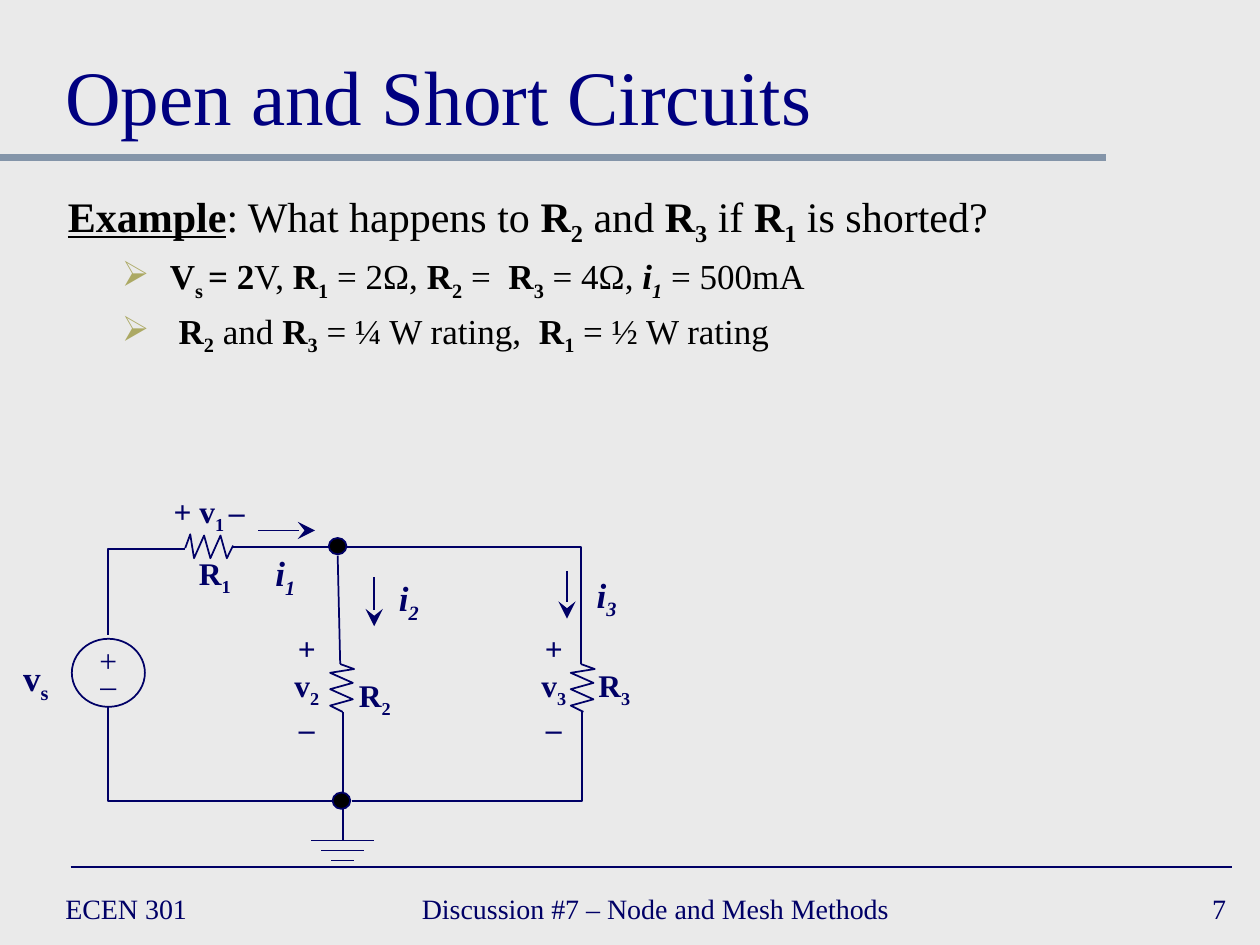
from lxml.etree import SubElement
from pptx import Presentation
from pptx.dml.color import RGBColor
from pptx.enum.shapes import MSO_CONNECTOR, MSO_SHAPE
from pptx.enum.text import MSO_ANCHOR, PP_ALIGN
from pptx.oxml.ns import qn
from pptx.util import Inches, Pt

COLORS = {
    "background": "EAEAEA",
    "rule": "8495A9",
    "circuit": "000066",
    "title": "000080",
    "body": "000000",
    "bullet": "ACA964",
}
FONT = "Times New Roman"
ZIGZAG = [(0.08, 0), (0.19, 0.04), (0, 0.07), (0.18, 0.15),
          (0, 0.2), (0.18, 0.28), (0, 0.33), (0.1, 0.38)]
ZIGZAG_WIDTH = 0.19


def rgb(name):
    return RGBColor.from_string(COLORS[name])


def symbol(letter, index, style="b"):
    return [(letter, style), (index, style + "s")]


def write_paragraph(paragraph, runs, size, color="circuit", align=PP_ALIGN.LEFT):
    paragraph.alignment = align
    font = paragraph.font
    font.name, font.size = FONT, Pt(size)
    font.color.rgb = rgb(color)
    for key, attribute in (("b", "bold"), ("i", "italic")):
        if all(key in style for _, style in runs):
            setattr(font, attribute, True)
    for text, style in runs:
        run = paragraph.add_run()
        run.text = text
        run.font.bold = "b" in style
        run.font.italic = "i" in style
        if "u" in style:
            run.font.underline = True
        if "s" in style:
            run.font._element.set("baseline", "-25000")


def add_text(slide, box, lines, size, color="circuit", align=PP_ALIGN.CENTER,
             anchor=MSO_ANCHOR.TOP, wrap=False):
    frame = slide.shapes.add_textbox(*map(Inches, box)).text_frame
    frame.word_wrap = wrap
    frame.vertical_anchor = anchor
    for number, runs in enumerate(lines):
        paragraph = frame.add_paragraph() if number else frame.paragraphs[0]
        write_paragraph(paragraph, runs, size, color, align)


def add_line(slide, start, end, color="circuit", width=1, arrow=False):
    line = slide.shapes.add_connector(
        MSO_CONNECTOR.STRAIGHT, *map(Inches, (*start, *end)))
    line.line.color.rgb = rgb(color)
    line.line.width = Pt(width)
    if arrow:
        SubElement(line.line._get_or_add_ln(), qn("a:tailEnd"),
                   type="stealth", w="lg", len="lg")
    SubElement(line._element.spPr, qn("a:effectLst"))


def add_wire(slide, points):
    corners = [(Inches(x), Inches(y)) for x, y in points]
    builder = slide.shapes.build_freeform(*corners[0])
    builder.add_line_segments(corners[1:], close=False)
    wire = builder.convert_to_shape()
    wire.shadow.inherit = False
    wire.fill.background()
    wire.line.color.rgb = rgb("circuit")
    wire.line.width = Pt(1)


def add_resistor(slide, left, top, horizontal=False):
    offsets = [(y, ZIGZAG_WIDTH - x) for x, y in ZIGZAG] if horizontal else ZIGZAG
    add_wire(slide, [(left + x, top + y) for x, y in offsets])


def add_ellipse(slide, box, filled):
    ellipse = slide.shapes.add_shape(MSO_SHAPE.OVAL, *map(Inches, box))
    ellipse.shadow.inherit = False
    if filled:
        ellipse.fill.solid()
        ellipse.fill.fore_color.rgb = rgb("body")
    else:
        ellipse.fill.background()
    ellipse.line.color.rgb = rgb("circuit")
    ellipse.line.width = Pt(1)


def add_bullet(paragraph):
    properties = paragraph._p.get_or_add_pPr()
    properties.set("marL", str(Inches(0.81)))
    properties.set("indent", str(Inches(-0.38)))
    paragraph.level = 1
    paragraph.space_before = Pt(4)
    color = SubElement(properties, qn("a:buClr"))
    SubElement(color, qn("a:srgbClr"), val=COLORS["bullet"])
    SubElement(properties, qn("a:buChar"), char="➢")


def add_example(slide):
    r1, r2, r3 = (symbol("R", index) for index in "123")
    question = [("Example", "bu"), (": What happens to ", ""), *r2, (" and ", ""),
                *r3, (" if ", ""), *r1, (" is shorted?", "")]
    values = [("V", "b"), ("s ", "bs"), ("= 2", "b"), ("V, ", ""), *r1,
              (" = 2Ω, ", ""), *r2, (" =  ", ""), *r3, (" = 4Ω, ", ""),
              *symbol("i", "1", "bi"), (" = 500mA", "")]
    ratings = [(" ", ""), *r2, (" and ", ""), *r3, (" = ¼ W rating,  ", ""),
               *r1, (" = ½ W rating", "")]
    frame = slide.shapes.add_textbox(
        Inches(0.44), Inches(1.46), Inches(8.66), Inches(2.27)).text_frame
    frame.word_wrap = True
    write_paragraph(frame.paragraphs[0], question, 24, "body")
    for fact in (values, ratings):
        paragraph = frame.add_paragraph()
        add_bullet(paragraph)
        write_paragraph(paragraph, fact, 20, "body")


def add_source(slide):
    add_text(slide, (0.08, 5.16, 0.41, 0.43), [symbol("v", "s")], 20)
    add_ellipse(slide, (0.57, 5.07, 0.58, 0.54), False)
    for sign, top in (("+", 5.04), ("_", 5.15)):
        add_text(slide, (0.69, top, 0.34, 0.4), [[(sign, "")]], 18)


def add_circuit(slide):
    add_source(slide)
    for wire in (
        [(0.86, 5.04), (0.86, 4.36), (1.47, 4.36)],
        [(0.86, 5.61), (0.86, 6.36), (2.64, 6.36)],
        [(2.75, 4.34), (4.61, 4.34), (4.61, 5.27)],
        [(2.79, 6.36), (4.62, 6.36), (4.62, 5.65)],
    ):
        add_wire(slide, wire)
    for start, end in (
        ((1.84, 4.34), (2.61, 4.34)),
        ((2.68, 4.41), (2.7, 5.27)),
        ((2.72, 5.65), (2.72, 6.29)),
        ((2.72, 6.42), (2.72, 6.67)),
    ):
        add_line(slide, start, end)
    for level, half_width in enumerate((0.25, 0.17, 0.09)):
        y = 6.67 + 0.08 * level
        add_line(slide, (2.72 - half_width, y), (2.72 + half_width, y))

    for left, top in ((2.61, 4.27), (2.64, 6.29)):
        add_ellipse(slide, (left, top, 0.14, 0.13), True)
    add_resistor(slide, 1.47, 4.24, horizontal=True)
    for left in (2.62, 4.53):
        add_resistor(slide, left, 5.27)

    for start, end in (((2.05, 4.21), (2.5, 4.21)),
                       ((2.97, 4.58), (2.97, 4.97)),
                       ((4.5, 4.53), (4.5, 4.91))):
        add_line(slide, start, end, arrow=True)
    for index, left, top in (("1", 2.08, 4.33), ("2", 3.06, 4.53), ("3", 4.63, 4.5)):
        add_text(slide, (left, top, 0.37, 0.44), [symbol("i", index, "bi")], 20)
    for index, left, top in (("1", 1.47, 4.35), ("2", 2.74, 5.32), ("3", 4.64, 5.24)):
        add_text(slide, (left, top, 0.47, 0.4), [symbol("R", index)], 18)
    add_text(slide, (1.27, 3.86, 0.78, 0.4),
             [[("+ v", "b"), ("1 ", "bs"), ("–", "b")]], 18)
    for index, left in (("2", 2.23), ("3", 4.19)):
        add_text(slide, (left, 4.94, 0.41, 1),
                 [[("+", "b")], symbol("v", index), [("–", "b")]], 18)


def add_footer(slide):
    for text, left, width, align in (
        ("ECEN 301", 0.42, 2.17, PP_ALIGN.LEFT),
        ("Discussion #7 – Node and Mesh Methods", 3.25, 4.2, PP_ALIGN.LEFT),
        ("7", 7.75, 2.08, PP_ALIGN.RIGHT),
    ):
        add_text(slide, (left, 7, width, 0.42), [[(text, "")]], 16,
                 align=align, anchor=MSO_ANCHOR.MIDDLE, wrap=True)


def main():
    presentation = Presentation()
    presentation.slide_width, presentation.slide_height = Inches(10), Inches(7.5)
    slide = presentation.slides.add_slide(presentation.slide_layouts[6])
    slide.background.fill.solid()
    slide.background.fill.fore_color.rgb = rgb("background")
    add_line(slide, (0, 1.25), (8.78, 1.25), "rule", 4)
    add_line(slide, (0.56, 6.88), (9.78, 6.88))
    add_text(slide, (0.42, 0.17, 9.17, 1), [[("Open and Short Circuits", "")]], 44,
             "title", PP_ALIGN.LEFT, MSO_ANCHOR.BOTTOM, True)
    add_example(slide)
    add_circuit(slide)
    add_footer(slide)
    presentation.save("out.pptx")


if __name__ == "__main__":
    main()
